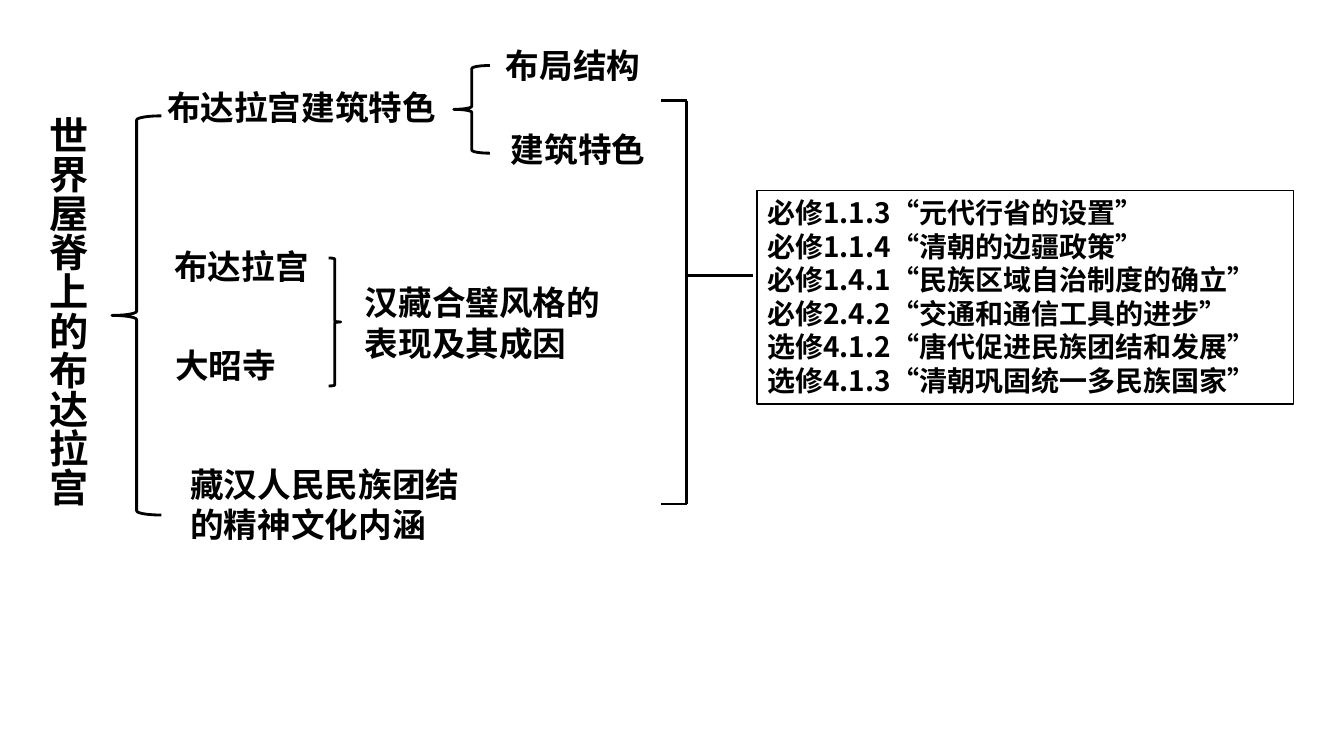
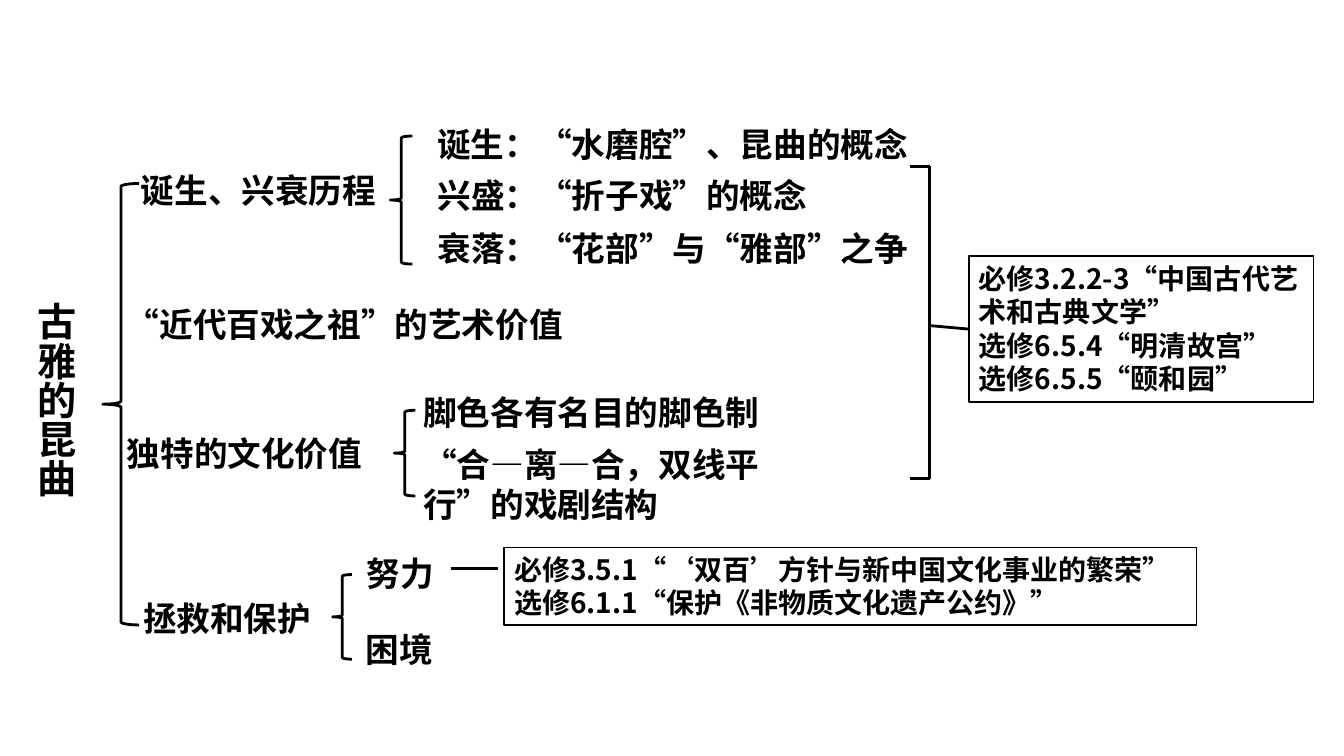
"""Build two bracket-tree revision slides on heritage topics."""
from dataclasses import dataclass
from typing import NamedTuple

from lxml.etree import SubElement
from pptx import Presentation
from pptx.dml.color import RGBColor as Rgb
from pptx.enum.lang import MSO_LANGUAGE_ID as Lang
from pptx.enum.shapes import MSO_CONNECTOR as Conn, MSO_SHAPE as Kind
from pptx.enum.text import MSO_ANCHOR as Anchor, MSO_AUTO_SIZE as Fit, PP_ALIGN as Align
from pptx.oxml.ns import qn
from pptx.util import Inches, Pt


@dataclass(frozen=True)
class Theme:
    font: str = "Noto Sans CJK SC"
    ink: Rgb = Rgb(0, 0, 0)
    paper: Rgb = Rgb(255, 255, 255)
    title: int = 28
    label: int = 24
    note: int = 20
    lead: float = 1.2
    stroke: float = 2
    frame: float = 1


class Box(NamedTuple):
    x: float
    y: float
    w: float
    h: float

    def lens(self) -> list:
        return [Inches(v) for v in self]


class Label(NamedTuple):
    text: str
    x: float
    y: float
    w: float
    rows: int = 1


class Brace(NamedTuple):
    box: Box
    kind: Kind = Kind.LEFT_BRACE


class Line(NamedTuple):
    x1: float
    y1: float
    x2: float
    y2: float


class Note(NamedTuple):
    text: str
    box: Box
    link: Line
    joined: bool = False


class Hook(NamedTuple):
    left: float
    right: float
    top: float
    foot: float


@dataclass(frozen=True)
class Page:
    title: str
    spot: Box
    labels: list[Label]
    braces: list[Brace]
    hook: Hook
    notes: list[Note]


THEME = Theme()

PAGES = [
    Page(
        "世界屋脊上的布达拉宫",
        Box(0.33, 1.1, 0.67, 5.2),
        [
            Label("布达拉宫建筑特色", 1.56, 0.81, 3.43),
            Label("布局结构", 4.92, 0.4, 1.75),
            Label("建筑特色", 4.97, 1.23, 1.57),
            Label("布达拉宫", 1.63, 2.39, 2.68),
            Label("大昭寺", 1.64, 3.37, 2.68),
            Label("汉藏合璧风格的\n表现及其成因", 3.52, 2.75, 2.77, 2),
            Label("藏汉人民民族团结的精神文化内涵", 1.79, 4.55, 2.97, 2),
        ],
        [
            Brace(Box(1.11, 1.15, 0.49, 3.96)),
            Brace(Box(4.5, 0.65, 0.36, 0.87)),
            Brace(Box(3.26, 2.56, 0.12, 1.27), Kind.RIGHT_BRACE),
        ],
        Hook(6.56, 6.81, 1, 5),
        [
            Note(
                "必修1.1.3“元代行省的设置”\n"
                "必修1.1.4“清朝的边疆政策”\n"
                "必修1.4.1“民族区域自治制度的确立”\n"
                "必修2.4.2“交通和通信工具的进步”\n"
                "选修4.1.2“唐代促进民族团结和发展”\n"
                "选修4.1.3“清朝巩固统一多民族国家”",
                Box(7.51, 1.89, 5.32, 2.12),
                Line(6.81, 2.73, 7.47, 2.73),
            )
        ],
    ),
    Page(
        "古雅的昆曲",
        Box(0.22, 2.95, 0.67, 2.65),
        [
            Label("诞生、兴衰历程", 1.3, 1.64, 2.64),
            Label("诞生：“水磨腔”、昆曲的概念", 4.24, 1.18, 5.06),
            Label("兴盛：“折子戏”的概念", 4.24, 1.69, 4.72),
            Label("衰落：“花部”与“雅部”之争", 4.24, 2.21, 5.32),
            Label("“近代百戏之祖”的艺术价值", 1.15, 2.97, 5.52),
            Label("独特的文化价值", 1.16, 4.25, 2.91),
            Label("脚色各有名目的脚色制", 4.1, 3.84, 4.68),
            Label("“合—离—合，双线平行”的戏剧结构", 4.1, 4.35, 4.29, 2),
            Label("拯救和保护", 1.32, 5.88, 3.55),
            Label("努力", 3.54, 5.44, 1.19),
            Label("困境", 3.53, 6.19, 2.66),
        ],
        [
            Brace(Box(1.02, 1.82, 0.36, 4.38)),
            Brace(Box(3.87, 1.35, 0.22, 1.27)),
            Brace(Box(3.91, 4.07, 0.21, 0.85)),
            Brace(Box(3.3, 5.7, 0.19, 0.84)),
        ],
        Hook(9.03, 9.22, 1.65, 4.75),
        [
            Note(
                "必修3.2.2-3“中国古代艺术和古典文学”\n"
                "选修6.5.4“明清故宫”\n"
                "选修6.5.5“颐和园”",
                Box(9.61, 2.54, 3.42, 1.45),
                Line(9.22, 3.23, 9.61, 3.23),
                True,
            ),
            Note(
                "必修3.5.1“‘双百’方针与新中国文化事业的繁荣”\n"
                "选修6.1.1“保护《非物质文化遗产公约》”",
                Box(5, 5.43, 6.87, 0.77),
                Line(4.47, 5.64, 4.94, 5.64),
            ),
        ],
    ),
]


def write(shape, text: str, size: int) -> None:
    """Fill a shape with bold, left-aligned text."""
    frame = shape.text_frame
    frame.text = text
    frame.word_wrap = True
    frame.auto_size = Fit.NONE
    frame.vertical_anchor = Anchor.TOP
    for para in frame.paragraphs:
        para.alignment = Align.LEFT
        para.line_spacing = Pt(size * THEME.lead)
        for run in para.runs:
            font = run.font
            font.size, font.bold, font.name = Pt(size), True, THEME.font
            font.color.rgb = THEME.ink
            font.language_id = Lang.SIMPLIFIED_CHINESE
            SubElement(run._r.rPr, qn("a:ea"), typeface=THEME.font)


def draw_title(slide, text: str, spot: Box) -> None:
    """Set the title as a vertical column."""
    title = slide.shapes.title
    title.left, title.top, title.width, title.height = spot.lens()
    write(title, text, THEME.title)
    title.text_frame._txBody.bodyPr.set("vert", "eaVert")


def draw_label(slide, item: Label) -> None:
    """Add one branch label."""
    high = 0.1 + 0.4 * item.rows
    box = slide.shapes.add_textbox(*Box(item.x, item.y, item.w, high).lens())
    write(box, item.text, THEME.label)


def draw_brace(slide, item: Brace) -> None:
    """Add one curly brace."""
    brace = slide.shapes.add_shape(item.kind, *item.box.lens())
    brace.shadow.inherit = False
    brace.fill.background()
    brace.line.color.rgb = THEME.ink
    brace.line.width = Pt(THEME.stroke)


def draw_line(slide, item: Line):
    """Add one straight line and return it."""
    line = slide.shapes.add_connector(Conn.STRAIGHT, *(Inches(v) for v in item))
    line.line.color.rgb = THEME.ink
    line.line.width = Pt(THEME.stroke)
    SubElement(line._element.spPr, qn("a:effectLst"))
    return line


def draw_hook(slide, hook: Hook) -> None:
    """Add a square bracket that opens to the left."""
    left, right, top, foot = hook
    draw_line(slide, Line(right, top, right, foot))
    for y in (top, foot):
        draw_line(slide, Line(left, y, right, y))


def draw_note(slide, note: Note) -> None:
    """Add a framed reference list and its link."""
    rect = slide.shapes.add_shape(Kind.RECTANGLE, *note.box.lens())
    rect.shadow.inherit = False
    rect.fill.background()
    rect.line.color.rgb = THEME.ink
    rect.line.width = Pt(THEME.frame)
    write(rect, note.text, THEME.note)
    line = draw_line(slide, note.link)
    if note.joined:
        line.end_connect(rect, 1)


def draw_page(deck, page: Page) -> None:
    """Add one slide to the deck."""
    slide = deck.slides.add_slide(deck.slide_layouts[5])
    slide.background.fill.solid()
    slide.background.fill.fore_color.rgb = THEME.paper
    draw_title(slide, page.title, page.spot)
    for label in page.labels:
        draw_label(slide, label)
    for brace in page.braces:
        draw_brace(slide, brace)
    draw_hook(slide, page.hook)
    for note in page.notes:
        draw_note(slide, note)


def main() -> None:
    """Build and save the deck."""
    deck = Presentation()
    deck.slide_width, deck.slide_height = Inches(13.33), Inches(7.5)
    for page in PAGES:
        draw_page(deck, page)
    deck.save("out.pptx")


if __name__ == "__main__":
    main()
